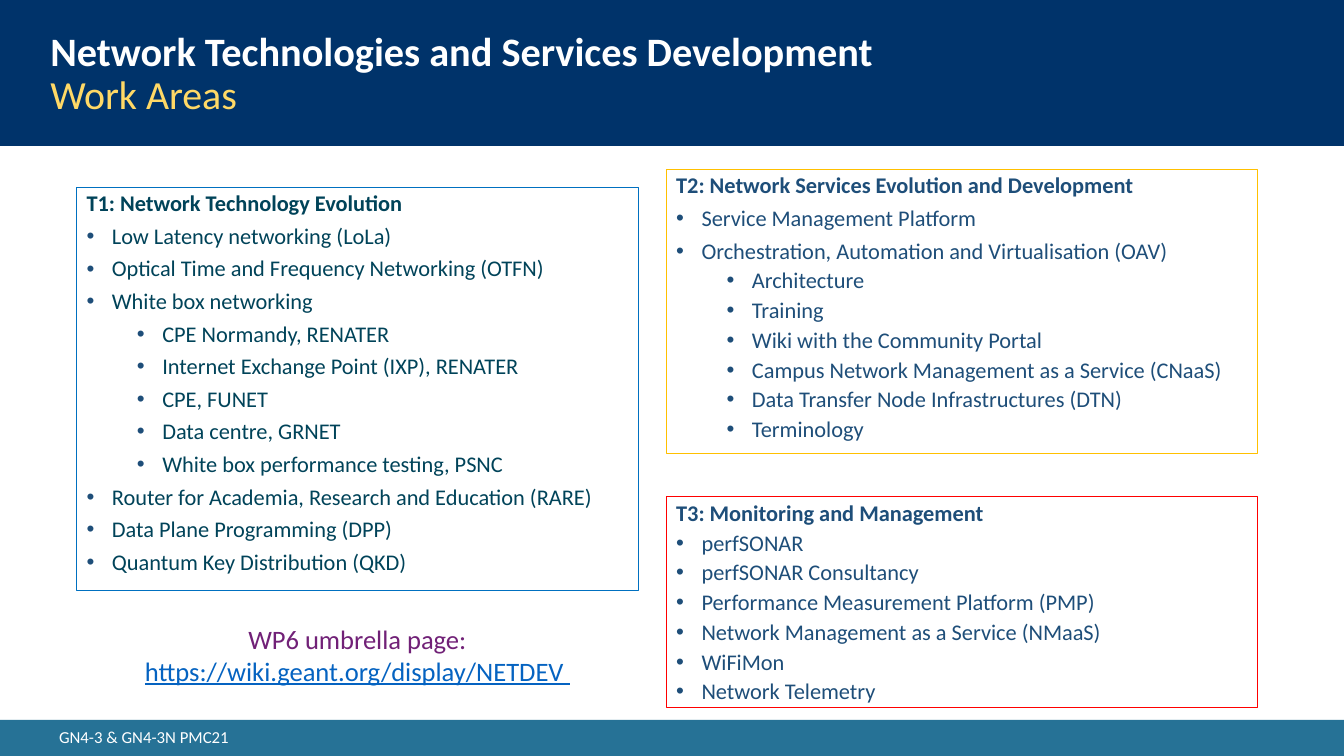
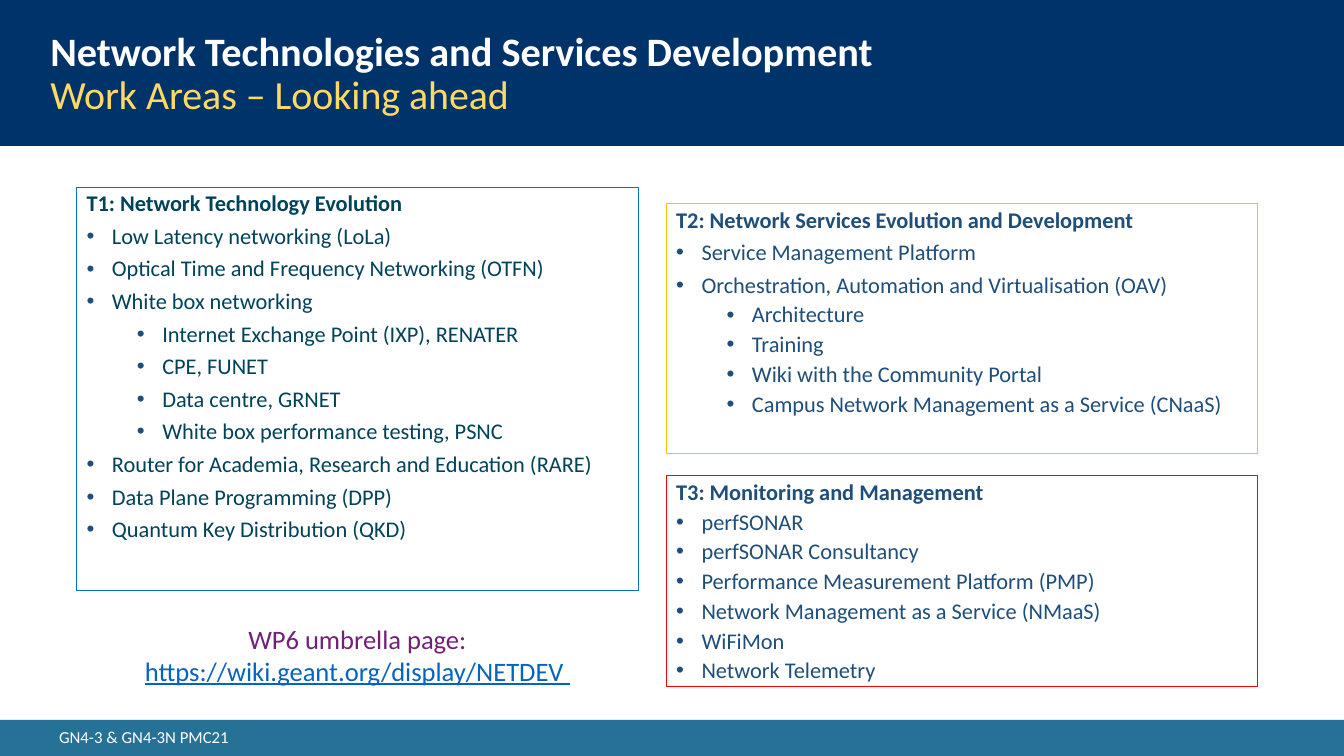
from lxml import etree
from pptx import Presentation
from pptx.dml.color import RGBColor
from pptx.enum.shapes import MSO_SHAPE
from pptx.enum.text import MSO_ANCHOR, MSO_AUTO_SIZE, PP_ALIGN
from pptx.oxml.ns import qn
from pptx.util import Cm, Pt

RECT = MSO_SHAPE.RECTANGLE
TOP, MIDDLE = MSO_ANCHOR.TOP, MSO_ANCHOR.MIDDLE
LEFT, CENTER = PP_ALIGN.LEFT, PP_ALIGN.CENTER
FIXED = MSO_AUTO_SIZE.NONE
COMPARE = 4  # layout with a title and four bodies

WIDE, HIGH = 33.87, 19.05
HEAD = "Network Technologies and Services Development"
FOOT = "GN4-3 & GN4-3N PMC21"
LINK = ("WP6 umbrella page: ", "https://wiki.geant.org/display/NETDEV ")

# A nested list holds the sub-items of the line above it.
TASKS = [
    ("T1: Network Technology Evolution", [
        "Low Latency networking (LoLa)",
        "Optical Time and Frequency Networking (OTFN)",
        "White box networking",
        ["CPE Normandy, RENATER",
         "Internet Exchange Point (IXP), RENATER",
         "CPE, FUNET",
         "Data centre, GRNET",
         "White box performance testing, PSNC"],
        "Router for Academia, Research and Education (RARE)",
        "Data Plane Programming (DPP)",
        "Quantum Key Distribution (QKD)",
    ]),
    ("T2: Network Services Evolution and Development", [
        "Service Management Platform",
        "Orchestration, Automation and Virtualisation (OAV)",
        ["Architecture",
         "Training",
         "Wiki with the Community Portal",
         "Campus Network Management as a Service (CNaaS)",
         "Data Transfer Node Infrastructures (DTN)",
         "Terminology"],
    ]),
    ("T3: Monitoring and Management", [
        "perfSONAR",
        "perfSONAR Consultancy",
        "Performance Measurement Platform (PMP)",
        "Network Management as a Service (NMaaS)",
        "WiFiMon",
        "Network Telemetry",
    ]),
]

ENDED = {"CPE Normandy, RENATER", "Data Transfer Node Infrastructures (DTN)",
         "Terminology"}

# Per slide: subtitle, items left out, top and height of the T2 and T3 boxes
SLIDES = [
    ("Work Areas", set(), (4.27, 7.16), (12.52, 5.31)),
    ("Work Areas – Looking ahead", ENDED, (5.13, 6.3), (11.99, 5.31)),
]

LEFT_COL, RIGHT_COL = (1.93, 14.15), (16.79, 14.91)  # left, width

THEME = {
    "font": "Calibri",
    "navy": "00336A", "teal": "267296", "white": "FFFFFF", "gold": "FFD966",
    "bullet": "1E4E79", "purple": "712177", "link": "0563C1",
    "head": 28.8, "sub": 28.5, "text": 16, "page": 19, "foot": 12,
    "indent": 0.64, "step": 1.27, "line": 0.75, "lead": 0.9,
}

# Per task: outline, text colour, space before items and sub-items
STYLES = [
    ("0070C0", "004359", (6, 6)),
    ("FFC000", "1E4E79", (6, 4)),
    ("FF0000", "1E4E79", (4, 4)),
]


def rgb(name):
    return RGBColor.from_string(THEME.get(name, name))


def apply(item, **vals):
    """Set each named attribute on the item."""
    for key, val in vals.items():
        setattr(item, key, val)


def place(shape, left, top, width, height):
    apply(shape, left=Cm(left), top=Cm(top), width=Cm(width),
          height=Cm(height))


def frame(shape, anchor=TOP, pad=0.13):
    """Give the text frame its shared margins, wrap and anchor."""
    text = shape.text_frame
    apply(text, word_wrap=True, auto_size=FIXED, vertical_anchor=anchor,
          margin_left=Cm(0.25), margin_right=Cm(0.25),
          margin_top=Cm(pad), margin_bottom=Cm(pad))
    return text


def write(para, words, size, color, bold=False, line=False):
    run = para.add_run()
    run.text = words
    apply(run.font, name=THEME["font"], size=Pt(size), bold=bold,
          underline=line)
    run.font.color.rgb = rgb(color)


def shape_para(para, level=None, gap=0, align=LEFT, lead=1.0):
    """Set bullet, indent and spacing; no level means no bullet."""
    props = para._p.get_or_add_pPr()
    if level is None:
        margin, indent = 0, 0
        etree.SubElement(props, qn("a:buNone"))
    else:
        margin = Cm(THEME["indent"] + level * THEME["step"])
        indent = -Cm(THEME["indent"])
        tint = etree.SubElement(props, qn("a:buClr"))
        etree.SubElement(tint, qn("a:srgbClr"), val=THEME["bullet"])
        etree.SubElement(props, qn("a:buFont"), typeface="Arial")
        etree.SubElement(props, qn("a:buChar"), char="•")
        para.level = level
    props.set("marL", str(margin))
    props.set("indent", str(indent))
    apply(para, alignment=align, line_spacing=lead, space_before=Pt(gap),
          space_after=Pt(0))


def flatten(items, level=0):
    """Yield each item with its level."""
    for item in items:
        if isinstance(item, list):
            yield from flatten(item, level + 1)
        else:
            yield level, item


def fill_task(shape, task, style, skip):
    head, items = task
    edge, color, gaps = style
    shape.line.color.rgb = rgb(edge)
    shape.line.width = Pt(THEME["line"])
    text = frame(shape)
    para = text.paragraphs[0]
    shape_para(para, lead=THEME["lead"])
    write(para, head, THEME["text"], color, bold=True)
    for level, item in flatten(items):
        if item not in skip:
            para = text.add_paragraph()
            shape_para(para, level, gaps[level], lead=THEME["lead"])
            write(para, item, THEME["text"], color)


def fill_title(shape, sub):
    para = frame(shape, MIDDLE).paragraphs[0]
    shape_para(para, lead=THEME["lead"])
    write(para, HEAD, THEME["head"], "white", bold=True)
    para.add_line_break()
    write(para, sub, THEME["sub"], "gold")


def fill_link(shape):
    para = frame(shape, pad=0.25).paragraphs[0]
    shape_para(para, align=CENTER)
    label, url = LINK
    write(para, label, THEME["page"], "purple")
    write(para, url, THEME["page"], "link", line=True)


def dress(layout, slide):
    """Build the bands and footer, then move them into the layout."""
    parts = []
    for color, top, high in (("navy", 0, 3.68), ("teal", 18.14, 0.91)):
        band = slide.shapes.add_shape(RECT, 0, Cm(top), Cm(WIDE), Cm(high))
        band.shadow.inherit = False
        band.fill.solid()
        band.fill.fore_color.rgb = rgb(color)
        band.line.fill.background()
        parts.append(band)
    foot = slide.shapes.add_textbox(Cm(1.24), Cm(18.19), Cm(4.85), Cm(0.76))
    write(frame(foot, MIDDLE).paragraphs[0], FOOT, THEME["foot"], "white")
    parts.append(foot)
    for num, part in enumerate(parts, 20):
        part.element.xpath(".//p:cNvPr")[0].set("id", str(num))
        layout.shapes.element.append(part.element)


def main():
    deck = Presentation()
    apply(deck, slide_width=Cm(WIDE), slide_height=Cm(HIGH))
    layout = deck.slide_layouts[COMPARE]
    place(layout.placeholders[0], 1.02, 0.61, 23.19, 2.54)
    for num, (sub, skip, second, third) in enumerate(SLIDES):
        slide = deck.slides.add_slide(layout)
        if num == 0:
            dress(layout, slide)
        title, *bodies, page = slide.placeholders
        fill_title(title, sub)
        spots = [(LEFT_COL, (4.72, 10.16)), (RIGHT_COL, second),
                 (RIGHT_COL, third)]
        for body, spot, task, style in zip(bodies, spots, TASKS, STYLES):
            (left, width), (top, height) = spot
            place(body, left, top, width, height)
            fill_task(body, task, style, skip)
        place(page, LEFT_COL[0], 15.44, LEFT_COL[1], 2.13)
        fill_link(page)
    deck.save("out.pptx")


if __name__ == "__main__":
    main()
